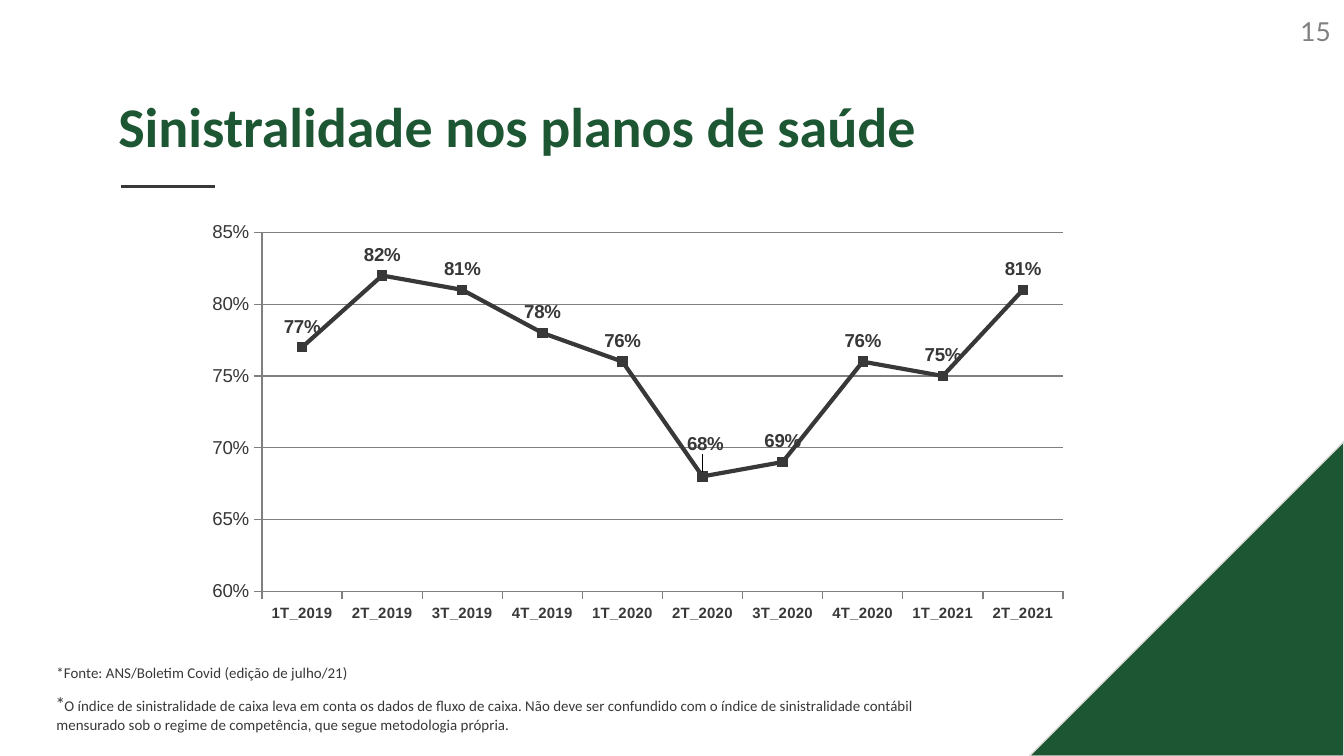
from lxml.etree import SubElement
from pptx import Presentation
from pptx.chart.data import CategoryChartData
from pptx.dml.color import RGBColor
from pptx.enum.chart import XL_CHART_TYPE, XL_LABEL_POSITION, XL_MARKER_STYLE, XL_TICK_MARK
from pptx.enum.shapes import MSO_CONNECTOR, MSO_SHAPE
from pptx.enum.text import MSO_ANCHOR, MSO_AUTO_SIZE, PP_ALIGN
from pptx.oxml import parse_xml
from pptx.oxml.ns import nsdecls, qn
from pptx.util import Inches, Pt

GREEN = RGBColor(0x1D, 0x56, 0x32)
DARK = RGBColor(0x38, 0x38, 0x38)
GRAY = RGBColor(0x80, 0x80, 0x80)
EDGE = RGBColor(0xDB, 0xDB, 0xDB)


def set_font(font, color, **values):
    for name, value in values.items():
        setattr(font, name, value)
    font.color.rgb = color


def place_text(holder, left, top, width, height, anchor=MSO_ANCHOR.TOP):
    box = dict(left=left, top=top, width=width, height=height)
    for name, value in box.items():
        setattr(holder, name, Inches(value))
    frame = holder.text_frame
    layout = dict(word_wrap=True, auto_size=MSO_AUTO_SIZE.NONE, vertical_anchor=anchor)
    for name, value in layout.items():
        setattr(frame, name, value)
    for side in ("left", "top", "right", "bottom"):
        setattr(frame, f"margin_{side}", Inches(0.1))
    return frame


# Slide in 16:9
prs = Presentation()
prs.slide_width = Inches(10)
prs.slide_height = prs.slide_width * 9 // 16
slide = prs.slides.add_slide(prs.slide_layouts[1])
shapes = slide.shapes

# Green corner
corner_size = Inches(2.34)
corner = shapes.add_shape(MSO_SHAPE.RIGHT_TRIANGLE, prs.slide_width - corner_size,
                          prs.slide_height - corner_size, corner_size, corner_size)
corner.shadow.inherit = False
corner.fill.solid()
corner.fill.fore_color.rgb = GREEN
corner.line.color.rgb = EDGE
corner.line.width = Pt(0.75)
corner._element.spPr.find(qn("a:xfrm")).set("flipH", "1")

# Title and the rule under it
heading = place_text(shapes.title, 0.78, 0.58, 8.39, 0.58).paragraphs[0]
heading.alignment = PP_ALIGN.LEFT
heading_run = heading.add_run()
heading_run.text = "Sinistralidade nos planos de saúde"
set_font(heading_run.font, GREEN, name="Calibri", size=Pt(30), bold=True)

rule = shapes.add_connector(MSO_CONNECTOR.STRAIGHT, Inches(0.9), Inches(1.39),
                            Inches(1.6), Inches(1.39))
rule.line.color.rgb = DARK
rule.line.width = Pt(1.5)
SubElement(rule._element.spPr, qn("a:effectLst"))

# Footnotes: each is a list of (text, font, size)
footnotes = [
    [("*Fonte: ANS/Boletim Covid (edição de julho/21)", "Calibri", 8)],
    [("*", "Lato", 10),
     ("O índice de sinistralidade de caixa leva em conta os dados de fluxo de caixa. "
      "Não deve ser confundido com o índice de sinistralidade contábil ", "Calibri", 8),
     ("\n", None, None),
     ("mensurado sob o regime de competência, que segue metodologia própria.", "Calibri", 8)],
]
notes_frame = place_text(slide.placeholders[1], 0.17, 4.84, 8.96, 0.67)
for index, pieces in enumerate(footnotes):
    note = notes_frame.add_paragraph() if index else notes_frame.paragraphs[0]
    note.space_before, note.space_after = Pt(0), Pt(6)
    note_format = note._p.get_or_add_pPr()
    note_format.set("marL", str(Inches(0.15)))
    note_format.set("indent", "0")
    SubElement(note_format, qn("a:buNone"))
    for text, font_name, size in pieces:
        if text == "\n":
            note.add_line_break()
            continue
        piece = note.add_run()
        piece.text = text
        set_font(piece.font, DARK, name=font_name, size=Pt(size))

# Loss ratio by quarter
chart_width, chart_height = 6.6, 3.27
quarters = [f"{quarter}T_{year}" for year in (2019, 2020, 2021) for quarter in (1, 2, 3, 4)][:10]
loss_data = CategoryChartData(number_format="0%")
loss_data.categories = quarters
loss_data.add_series("Series 1", (0.77, 0.82, 0.81, 0.78, 0.76, 0.68, 0.69, 0.76, 0.75, 0.81))
chart = shapes.add_chart(XL_CHART_TYPE.LINE_MARKERS, Inches(1.52), Inches(1.39),
                         Inches(chart_width), Inches(chart_height), loss_data).chart
chart.has_legend = False
chart.has_title = False
set_font(chart.font, DARK, name="Arial", size=Pt(10))

# Axes and gridlines
ratio_axis, quarter_axis = chart.value_axis, chart.category_axis
ratio_format = dict(minimum_scale=0.6, maximum_scale=0.85, major_unit=0.05,
                    has_major_gridlines=True)
for name, value in ratio_format.items():
    setattr(ratio_axis, name, value)
ratio_axis.tick_labels.number_format = "0%"
ratio_axis.tick_labels.number_format_is_linked = False
set_font(quarter_axis.tick_labels.font, DARK, name="Arial", size=Pt(8), bold=True)
for axis in (ratio_axis, quarter_axis):
    axis.major_tick_mark = XL_TICK_MARK.OUTSIDE
    axis.minor_tick_mark = XL_TICK_MARK.NONE
for line in (ratio_axis.format.line, quarter_axis.format.line,
             ratio_axis.major_gridlines.format.line):
    line.color.rgb = GRAY
    line.width = Pt(0.75)

# Line, markers and labels
ratio = chart.plots[0].series[0]
chart.plots[0].vary_by_categories = False
ratio.smooth = False
ratio.format.line.color.rgb = DARK
ratio.format.line.width = Pt(2.25)
ratio.marker.style = XL_MARKER_STYLE.SQUARE
ratio.marker.size = 5
ratio.marker.format.fill.solid()
ratio.marker.format.fill.fore_color.rgb = DARK
ratio.marker.format.line.color.rgb = DARK
labels = ratio.data_labels
label_format = dict(show_value=True, position=XL_LABEL_POSITION.ABOVE,
                    number_format="0%", number_format_is_linked=False)
for name, value in label_format.items():
    setattr(labels, name, value)
lowest = ratio.points[5].data_label
lowest.position = XL_LABEL_POSITION.ABOVE
for label in (labels, lowest):
    set_font(label.font, DARK, name="Arial", size=Pt(10), bold=True)

# Manual positions: the plot area, and the lowest label raised without a leader line
plot_area = chart._chartSpace.chart.plotArea
for old_layout in plot_area.findall(qn("c:layout")):
    plot_area.remove(old_layout)
lowest_label = plot_area.find(".//" + qn("c:dLbl"))
plot_layout = dict(layoutTarget="inner", xMode="edge", yMode="edge",
                   x=0.43 / chart_width, y=0.34 / chart_height,
                   w=5.96 / chart_width, h=2.67 / chart_height)
label_layout = dict(x=0.02 / chart_width, y=-0.09 / chart_height)
for parent, position, values in ((plot_area, 0, plot_layout), (lowest_label, 1, label_layout)):
    entries = "".join(f'<c:{name} val="{value}"/>' for name, value in values.items())
    parent.insert(position, parse_xml(f'<c:layout {nsdecls("c")}><c:manualLayout>{entries}'
                                      '</c:manualLayout></c:layout>'))
lowest_label.getparent().append(parse_xml(
    f'<c:extLst {nsdecls("c")}><c:ext uri="{{CE6537A1-D6FC-4f65-9D91-7224C49458BB}}" '
    'xmlns:c15="http://schemas.microsoft.com/office/drawing/2012/chart">'
    '<c15:showLeaderLines val="0"/></c:ext></c:extLst>'))

# Page number
page_box = shapes.add_textbox(0, 0, 0, 0)
page = place_text(page_box, 9.28, 0.08, 0.72, 0.3, MSO_ANCHOR.MIDDLE).paragraphs[0]
page.alignment = PP_ALIGN.RIGHT
page_run = page.add_run()
page_run.text = "15"
set_font(page_run.font, GRAY, name="Lato", size=Pt(14))

prs.save("out.pptx")
